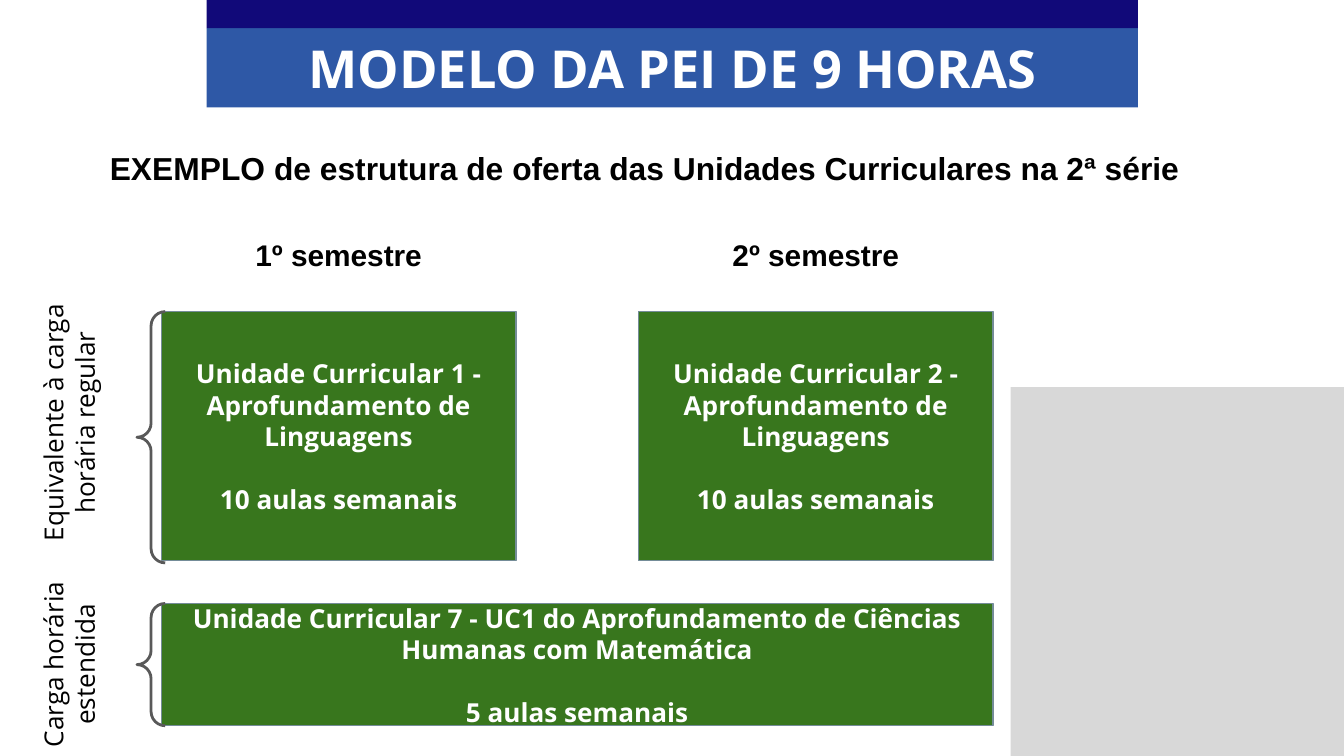
from pptx import Presentation
from pptx.util import Pt
from pptx.dml.color import RGBColor
from pptx.enum.shapes import MSO_SHAPE
from pptx.enum.text import MSO_ANCHOR, PP_ALIGN
from lxml.etree import SubElement
from pptx.oxml.ns import qn

HEX = {"green": "38761D", "edge": "748C98", "blue": "2E58A6", "navy": "110979",
       "white": "FFFFFF", "black": "000000", "brace": "595959", "gray": "BFBFBF"}

TITLE = "MODELO DA PEI DE 9 HORAS"
LEAD = "EXEMPLO de estrutura de oferta das Unidades Curriculares na 2ª série"
TERMS = [
    ("1º semestre", ["Unidade Curricular 1 - Aprofundamento de Linguagens", "10 aulas semanais"]),
    ("2º semestre", ["Unidade Curricular 2 - Aprofundamento de Linguagens", "10 aulas semanais"]),
]
EXTRA = ["Unidade Curricular 7 - UC1 do Aprofundamento de Ciências Humanas com Matemática",
         "5 aulas semanais"]
LOADS = [
    ("Equivalente à carga horária regular", 167, 134.6, 226.4, 142.6),
    ("Carga horária estendida", 323.3, 65.5, 356, 128.2),
]

LEFT, WIDE, STEP = 86.4, 190.1, 255.6
TOP, TALL = 167, 133.2
LOW, SHORT = 323.3, 65.5
HEAD_X, HEAD_W = 110.7, 498.9
SANS, ARIAL = "Open Sans", "Arial"

deck = Presentation()
deck.slide_width, deck.slide_height = Pt(720), Pt(405)
slide = deck.slides.add_slide(deck.slide_layouts[6])


def tint(name):
    return RGBColor.from_string(HEX[name])


def draw(kind, box, fill=None, line=None, width=0.75):
    shape = slide.shapes.add_shape(kind, *map(Pt, box))
    shape.shadow.inherit = False
    if fill:
        shape.fill.solid()
        shape.fill.fore_color.rgb = tint(fill)
    else:
        shape.fill.background()
    if line:
        shape.line.color.rgb = tint(line)
        shape.line.width = Pt(width)
    else:
        shape.line.fill.background()
    return shape


def write(shape, lines, size, font=SANS, color="black", bold=True,
          align=PP_ALIGN.CENTER, anchor=MSO_ANCHOR.TOP, pad=7.2):
    frame = shape.text_frame
    frame.word_wrap = True
    frame.vertical_anchor = anchor
    frame.margin_left = frame.margin_right = Pt(7.2)
    frame.margin_top = frame.margin_bottom = Pt(pad)
    for i, line in enumerate(lines):
        para = frame.add_paragraph() if i else frame.paragraphs[0]
        para.alignment = align
        if i:
            para.space_before = Pt(1.2 * size)
        run = para.add_run()
        run.text = line
        run.font.size, run.font.name, run.font.bold = Pt(size), font, bold
        run.font.color.rgb = tint(color)


def label(box, text, size, **style):
    shape = slide.shapes.add_textbox(*map(Pt, box))
    write(shape, [text], size, **style)
    return shape


def unit(box, lines):
    shape = draw(MSO_SHAPE.RECTANGLE, box, "green", "edge")
    write(shape, lines, 14, color="white", anchor=MSO_ANCHOR.MIDDLE)


draw(MSO_SHAPE.RECTANGLE, (HEAD_X, 15.1, HEAD_W, 42.5), "blue")
draw(MSO_SHAPE.RECTANGLE, (HEAD_X, 0, HEAD_W, 15.1), "navy")
label((HEAD_X, 15.8, HEAD_W, 41), TITLE, 28, color="white", pad=3.6)
label((51.8, 72.7, 593.3, 35.3), LEAD, 17, font=ARIAL, align=PP_ALIGN.LEFT)

for i, (term, lines) in enumerate(TERMS):
    x = LEFT + i * STEP
    label((x, 119.5, WIDE, 33.8), term, 16, font=ARIAL)
    unit((x, TOP, WIDE, TALL), lines)
unit((LEFT, LOW, STEP + WIDE, SHORT), EXTRA)

for text, top, tall, mid, span in LOADS:
    side = label((36.9 - span / 2, mid - 24.1, span, 48.2), text, 14, bold=False)
    side.rotation = 270
    brace = draw(MSO_SHAPE.LEFT_BRACE, (73.4, top, 15.1, tall), line="brace", width=1.5)
    brace.adjustments[0] = brace.adjustments[1] = 0.5

panel = draw(MSO_SHAPE.RECTANGLE, (541.4, 207.4, 178.6, 197.6), "gray")
shade = panel.fill._xPr.find(qn("a:solidFill"))[0]
SubElement(shade, qn("a:alpha")).set("val", "60000")

deck.save("out.pptx")
